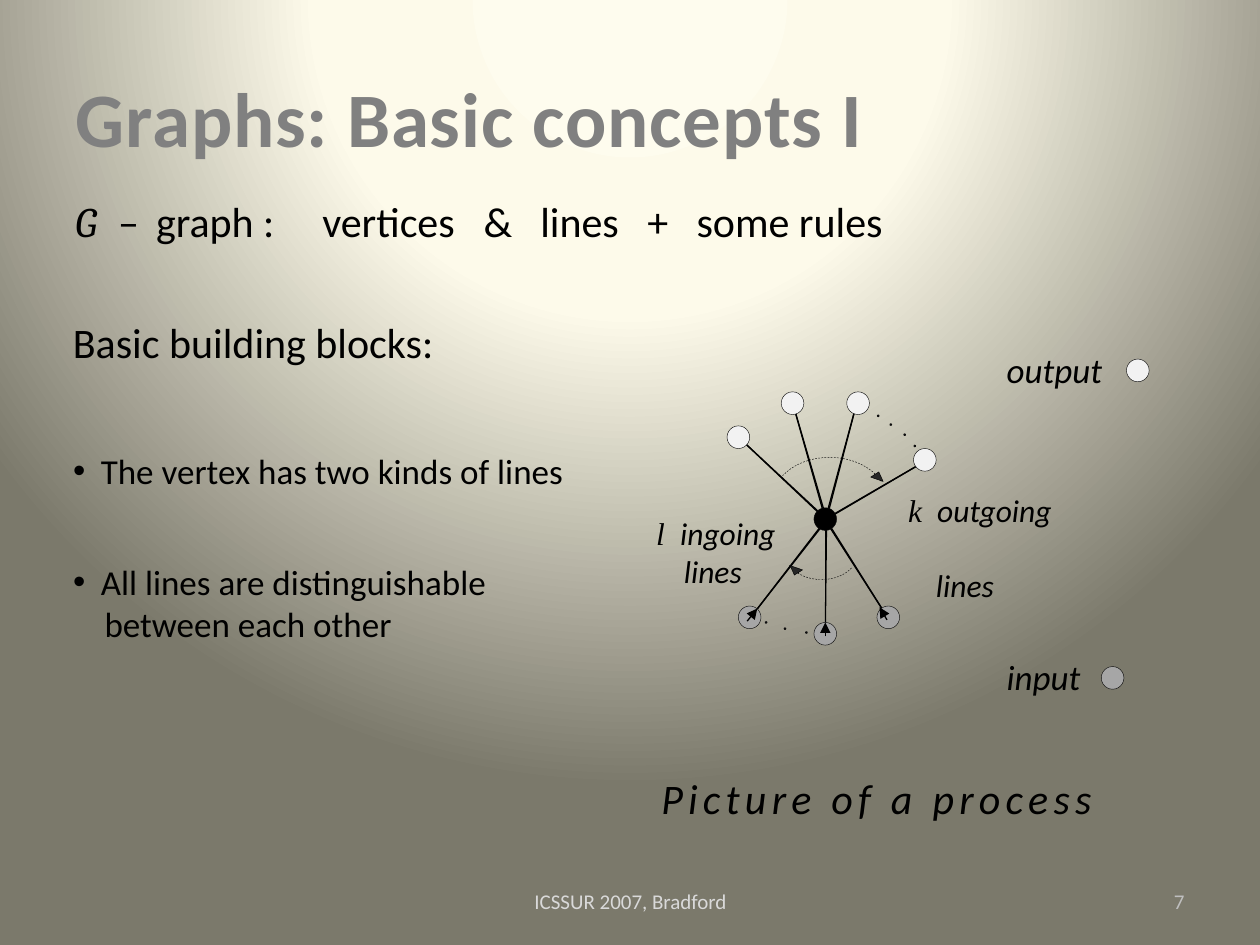
"""Build the slide on the basic concepts of graphs."""
from lxml.etree import SubElement
from pptx import Presentation
from pptx.dml.color import RGBColor
from pptx.enum.dml import MSO_LINE
from pptx.enum.shapes import MSO_CONNECTOR, MSO_SHAPE
from pptx.enum.text import MSO_ANCHOR, MSO_AUTO_SIZE, PP_ALIGN
from pptx.oxml import parse_xml
from pptx.oxml.ns import nsdecls, qn
from pptx.util import Inches, Pt

COLORS = {
    "text": "000000", "title": "808080", "footer": "D9D9D9", "number": "BFBFBF",
    "outline": "0D0D0D", "arrow": "262626", "output": "F2F2F2", "input": "A6A6A6",
    "glow": "FEFCEE", "cream": "FDFAEA", "olive": "7B796B",
}


def add_run(paragraph, text, size, color="text", font="Calibri", italic=False):
    run = paragraph.add_run()
    run.text = text
    run.font.size = Pt(size)
    run.font.name = font
    run.font.italic = italic
    run.font.color.rgb = RGBColor.from_string(COLORS[color])
    return run


def add_preset(preset, left, top, width, height, fill=None, line="outline"):
    shape = slide.shapes.add_shape(
        preset, Inches(left), Inches(top), Inches(width), Inches(height))
    shape.shadow.inherit = False
    if fill:
        shape.fill.solid()
        shape.fill.fore_color.rgb = RGBColor.from_string(COLORS[fill])
    else:
        shape.fill.background()
    if line:
        shape.line.color.rgb = RGBColor.from_string(COLORS[line])
        shape.line.width = Pt(0.25)
    else:
        shape.line.fill.background()
    return shape


presentation = Presentation()
presentation.slide_width = Inches(10)
presentation.slide_height = Inches(7.5)
slide = presentation.slides.add_slide(presentation.slide_layouts[3])

stops = "".join(
    f'<a:gs pos="{position * 1000}"><a:srgbClr val="{COLORS[name]}"/></a:gs>'
    for position, name in ((0, "glow"), (40, "cream"), (100, "olive")))
slide.element.cSld.insert(0, parse_xml(
    f'<p:bg {nsdecls("p", "a")}><p:bgPr><a:gradFill rotWithShape="1">'
    f'<a:gsLst>{stops}</a:gsLst><a:path path="circle">'
    '<a:fillToRect l="50000" t="-80000" r="50000" b="180000"/></a:path>'
    '</a:gradFill><a:effectLst/></p:bgPr></p:bg>'))

title, *bullet_boxes = slide.placeholders
boxes = (
    (title, 0.5, 0.3, 9, 1.25),
    (bullet_boxes[0], 0.48, 3.25, 5.1, 0.97),
    (bullet_boxes[1], 0.48, 4.24, 4.12, 1.08),
)
for shape, left, top, width, height in boxes:
    shape.left, shape.top = Inches(left), Inches(top)
    shape.width, shape.height = Inches(width), Inches(height)
    shape.text_frame.vertical_anchor = MSO_ANCHOR.MIDDLE
    shape.text_frame.auto_size = MSO_AUTO_SIZE.NONE

paragraph = title.text_frame.paragraphs[0]
paragraph.alignment = PP_ALIGN.LEFT
run = add_run(paragraph, "Graphs: Basic concepts I", 44, "title")
run.font.bold = True
run.font._element.set("spc", "50")

bullet_texts = (
    ("The vertex has two kinds of lines",),
    ("All lines are distinguishable", "between each other"),
)
for shape, lines in zip(bullet_boxes, bullet_texts):
    for index, text in enumerate(lines):
        frame = shape.text_frame
        paragraph = frame.add_paragraph() if index else frame.paragraphs[0]
        paragraph.space_before = Pt(0)
        properties = paragraph._element.get_or_add_pPr()
        properties.set("marL", str(Inches(0.25 if index else 0.22)))
        properties.set("indent", str(0 if index else Inches(-0.22)))
        if index:
            SubElement(properties, qn("a:buNone"))
        else:
            SubElement(properties, qn("a:buChar")).set("char", "•")
        add_run(paragraph, text, 20)

labels = (
    ("ICSSUR 2007, Bradford", 3.42, 6.95, 3.17, 0.4, 12, "footer", False, PP_ALIGN.CENTER),
    ("7", 7.17, 6.95, 2.33, 0.4, 12, "number", False, PP_ALIGN.RIGHT),
    ("Basic building blocks:", 0.48, 2.37, 7.38, 0.68, 24, "text", False, PP_ALIGN.LEFT),
    ("input", 7.89, 5.03, 1.02, 0.68, 20, "text", True, PP_ALIGN.LEFT),
    ("output", 7.89, 2.59, 1.02, 0.68, 20, "text", True, PP_ALIGN.LEFT),
    ("Picture of a process", 5.15, 5.99, 4.1, 0.68, 24, "text", True, PP_ALIGN.LEFT),
)
for text, left, top, width, height, size, color, italic, alignment in labels:
    shape = slide.shapes.add_textbox(Inches(left), Inches(top), Inches(width), Inches(height))
    shape.text_frame.word_wrap = True
    shape.text_frame.vertical_anchor = MSO_ANCHOR.MIDDLE
    paragraph = shape.text_frame.paragraphs[0]
    paragraph.alignment = alignment
    run = add_run(paragraph, text, size, color, italic=italic)
    if text.startswith("Picture"):
        run.font._element.set("spc", "300")

symbol_lines = (
    ("G", "Cambria", "\t–\tgraph :\tvertices\t&\tlines\t+\tsome rules", False, 24,
     (0.5, 1.41, 7.63, 0.68), (0.34, 0.64, 1.96, 3.24, 3.69, 4.54, 4.93), None),
    ("k", "Times New Roman", "\toutgoing", True, 18, (7.11, 3.85, 1.38, 0.71), (0.23,), 21),
    ("l", "Times New Roman", "\tingoing", True, 18, (5.11, 4.03, 1.44, 0.71), (0.19,), 0),
)
for symbol, font, text, italic, size, box, tab_stops, gap in symbol_lines:
    shape = slide.shapes.add_textbox(*map(Inches, box))
    frame = shape.text_frame
    frame.word_wrap = True
    paragraph = frame.paragraphs[0]
    tab_list = SubElement(paragraph._element.get_or_add_pPr(), qn("a:tabLst"))
    for position in tab_stops:
        tab = SubElement(tab_list, qn("a:tab"))
        tab.set("pos", str(Inches(position)))
        tab.set("algn", "l")
    add_run(paragraph, symbol, size, font=font, italic=True)
    add_run(paragraph, text, size, italic=italic)
    if gap is None:
        frame.vertical_anchor = MSO_ANCHOR.MIDDLE
    else:
        paragraph = frame.add_paragraph()
        paragraph.space_before = Pt(gap)
        paragraph._element.get_or_add_pPr().set("marL", str(Inches(0.22)))
        add_run(paragraph, "lines", size, italic=True)

output_ends = ((5.84, 3.45), (7.36, 3.65), (6.28, 3.16), (6.81, 3.16))
input_ends = ((7.05, 4.91), (6.55, 5.03), (5.95, 4.91))
strokes = []
for center_x, has_arrow in ((6.55, True), (6.56, False)):
    strokes += [((center_x, 4.13), end, False) for end in input_ends]
    strokes += [((center_x, 4.12), end, has_arrow) for end in output_ends]
input_arrows = [
    ((6.55, 5.05), (6.55, 4.94), True),
    ((5.93, 4.93), (6.01, 4.83), True),
    ((7.04, 4.92), (6.98, 4.82), True),
]
output_nodes = ((5.77, 3.38), (6.72, 3.11), (7.25, 3.56), (6.2, 3.11), (8.94, 2.85))
input_nodes = ((5.86, 4.81), (6.96, 4.81), (6.46, 4.94), (8.74, 5.29))
nodes = [("text", 6.46, 4.03)]
nodes += [("output", *node) for node in output_nodes]
nodes += [("input", *node) for node in input_nodes]

for group, circles in ((strokes, nodes), (input_arrows, [])):
    for start, end, has_arrow in group:
        connector = slide.shapes.add_connector(
            MSO_CONNECTOR.STRAIGHT, *map(Inches, start + end))
        connector.line.color.rgb = RGBColor.from_string(COLORS["text"])
        connector.line.width = Pt(0.75)
        if has_arrow:
            SubElement(connector.line._get_or_add_ln(), qn("a:tailEnd")).set("type", "triangle")
        SubElement(connector._element.spPr, qn("a:effectLst"))
    for fill, left, top in circles:
        add_preset(MSO_SHAPE.OVAL, left, top, 0.18, 0.18, fill)

dots = ((6.96, 3.29), (7.06, 3.36), (7.17, 3.44), (7.25, 3.53),
        (6.07, 4.93), (6.22, 4.98), (6.39, 5.01))
for left, top in dots:
    add_preset(MSO_SHAPE.OVAL, left, top, 0.02, 0.02, "outline", None)

sweeps = (
    ((6.13, 3.63, 0.91, 0.68), 204.37, (6.2, 3.65, 0.94, 0.77), 0),
    ((6.23, 4.17, 0.58, 0.43), 202.99, (6.14, 3.89, 0.94, 0.77), 180),
)
for arc_box, arc_end, arrow_box, rotation in sweeps:
    arc = add_preset(MSO_SHAPE.ARC, *arc_box)
    arc.line.dash_style = MSO_LINE.DASH
    arc.adjustments[0], arc.adjustments[1] = 124.35, arc_end
    arrow = add_preset(MSO_SHAPE.CIRCULAR_ARROW, *arrow_box, "arrow", "text")
    for index, value in enumerate((0, 7.41, 189.28, 189.05, 0.05)):
        arrow.adjustments[index] = value
    arc.rotation = arrow.rotation = rotation

presentation.save("out.pptx")
